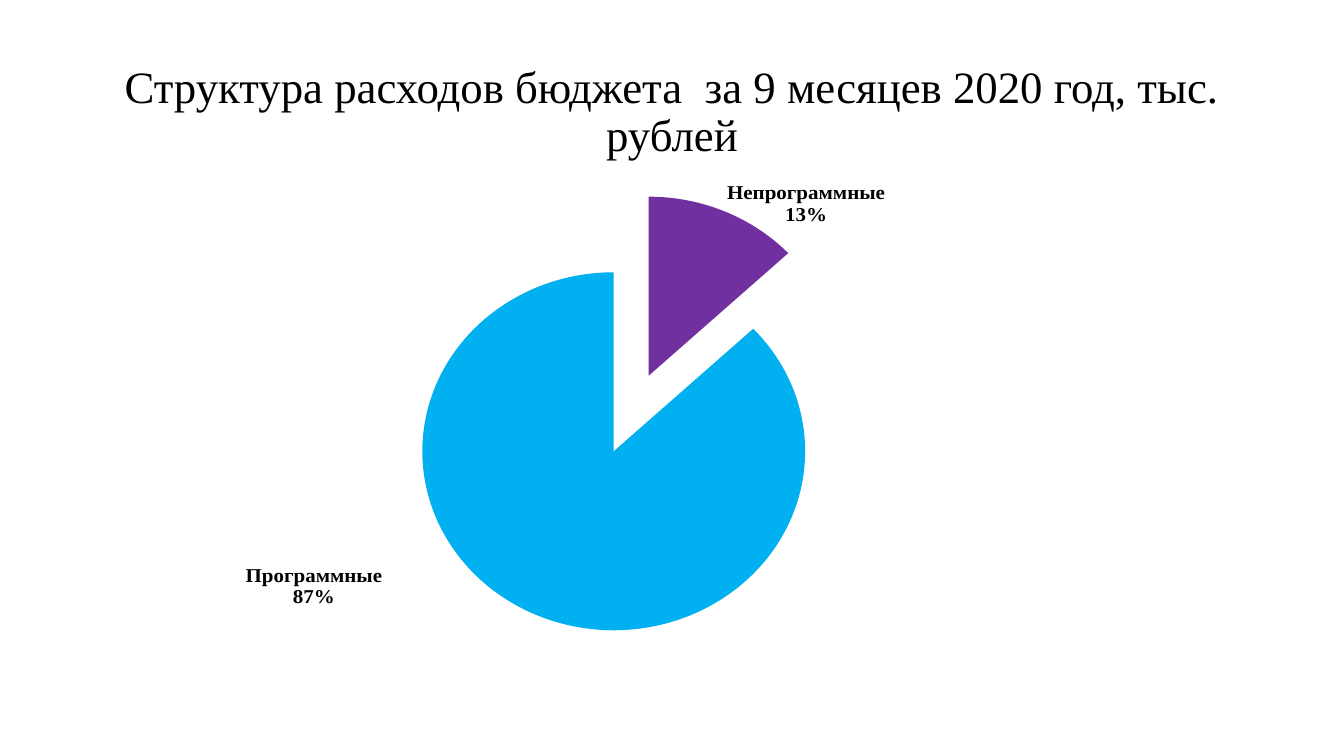
import pptx
import pptx.util
import pptx.oxml
import pptx.oxml.ns
import pptx.dml.color
import pptx.chart.data
import pptx.enum.chart
import pptx.enum.text

Cm = pptx.util.Cm
HUES = {"text": "000000", "other": "7030A0", "main": "00B0F0"}
SERIF = "Times New Roman"
BURST = 23


def rgb(name):
    return pptx.dml.color.RGBColor.from_string(HUES[name])


def style(font, size, face, bold=False, hue="text"):
    font.size = pptx.util.Pt(size)
    font.name = face
    font.bold = bold
    font.color.rgb = rgb(hue)


def write(frame, text, align=pptx.enum.text.PP_ALIGN.CENTER, space=0.9, **form):
    frame.word_wrap = True
    frame.vertical_anchor = pptx.enum.text.MSO_ANCHOR.MIDDLE
    para = frame.paragraphs[0]
    para.alignment = align
    para.line_spacing = space
    run = para.add_run()
    run.text = text
    style(run.font, **form)


def node(tag, inner="", **attrs):
    pairs = "".join(f' {key}="{val}"' for key, val in attrs.items())
    space = pptx.oxml.ns.nsdecls("c")
    return pptx.oxml.parse_xml(f"<c:{tag} {space}{pairs}>{inner}</c:{tag}>")


def layout(**parts):
    inner = "".join(f'<c:{key} val="{val}"/>' for key, val in parts.items())
    return node("layout", f"<c:manualLayout>{inner}</c:manualLayout>")


def add_title(slide, text):
    title = slide.shapes.title
    title.left, title.top = Cm(2.33), Cm(1.01)
    title.width, title.height = Cm(29.21), Cm(3.68)
    write(title.text_frame, text, size=32, face=SERIF)


def add_pie(slide, shares):
    data = pptx.chart.data.CategoryChartData(number_format="#,##0.0")
    data.categories = [name for name, val, hue in shares]
    data.add_series("Series 1", [val for name, val, hue in shares])
    kind = pptx.enum.chart.XL_CHART_TYPE.PIE
    chart = slide.shapes.add_chart(
        kind, Cm(5.51), Cm(4.11), Cm(21.44), Cm(12.62), data).chart
    chart.has_legend = False
    chart.has_title = False
    style(chart.font, 18, "Calibri")
    plot = chart.plots[0]
    plot.vary_by_categories = True
    series = plot.series[0]

    # Slices
    for spot, (name, val, hue) in enumerate(shares):
        fill = series.points[spot].format.fill
        fill.solid()
        fill.fore_color.rgb = rgb(hue)
    root = chart._chartSpace
    for shape in root.xpath(".//c:dPt/c:spPr"):
        shape.addprevious(node("explosion", val=BURST))

    # Labels
    place = pptx.enum.chart.XL_LABEL_POSITION.BEST_FIT
    moved = series.points[1].data_label
    for label in (series.data_labels, moved):
        style(label.font, 15, SERIF, bold=True)
        label.position = place
    flags = {"showVal": 0, "showCatName": 1, "showPercent": 1,
             "showLeaderLines": 0}
    for tag, val in flags.items():
        for flag in root.xpath(f".//c:ser//c:{tag}"):
            flag.set("val", str(val))
    root.xpath(".//c:dLbl/c:idx")[0].addnext(layout(x=-0.18, y=-0.12))

    # Plot area
    area = root.xpath(".//c:plotArea")[0]
    for old in area.xpath("./c:layout"):
        area.remove(old)
    inner = {"layoutTarget": "inner", "xMode": "edge", "yMode": "edge"}
    area.insert(0, layout(**inner, x=0.26, y=0.11, w=0.45, h=0.77))


def main():
    deck = pptx.Presentation()
    deck.slide_width, deck.slide_height = Cm(33.87), Cm(19.05)
    slide = deck.slides.add_slide(deck.slide_layouts[5])
    add_title(
        slide, "Структура расходов бюджета  за 9 месяцев 2020 год, тыс. рублей")
    add_pie(slide, [("Непрограммные", 13, "other"), ("Программные", 87, "main")])
    deck.save("out.pptx")


if __name__ == "__main__":
    main()
